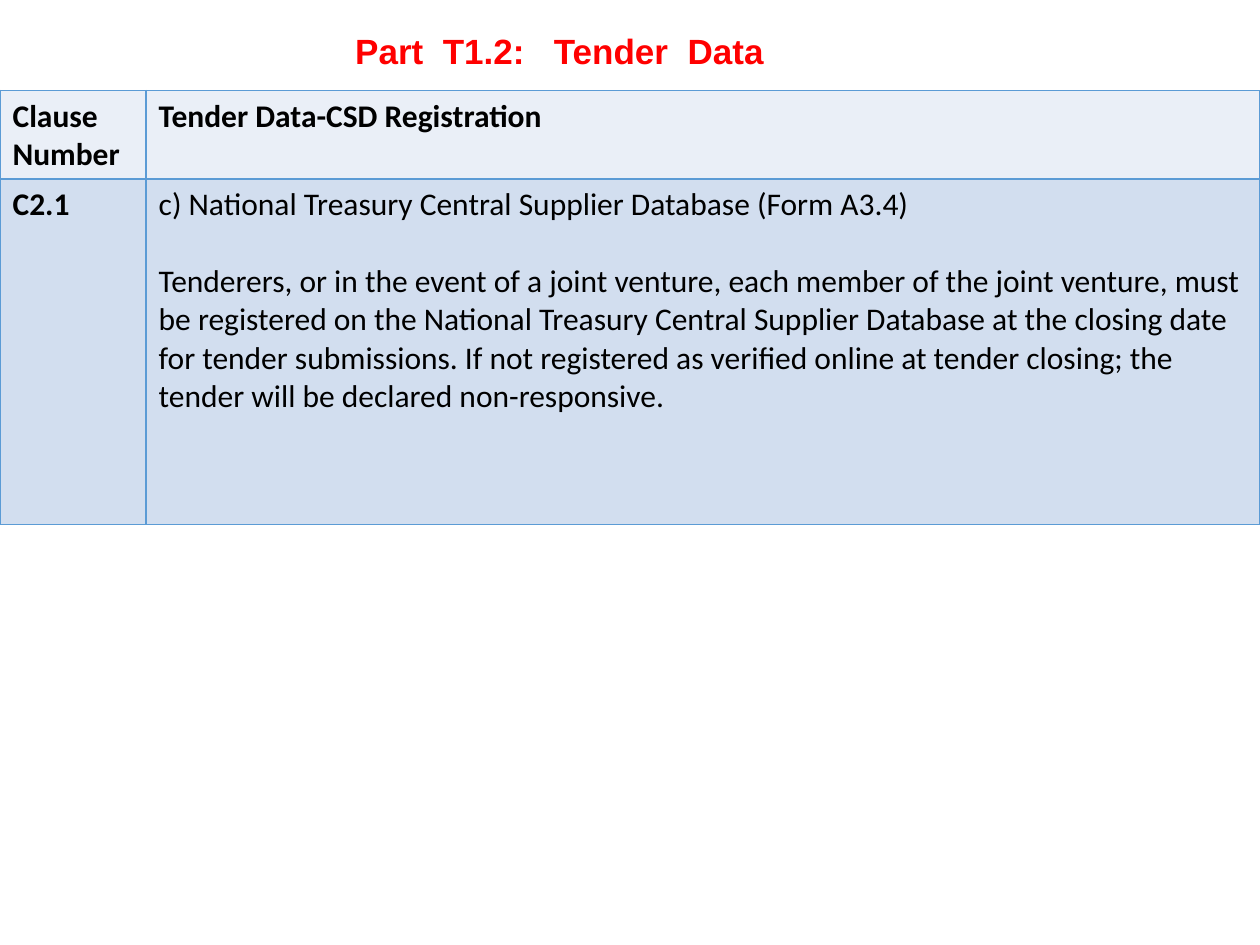
from lxml.etree import SubElement
from pptx import Presentation
from pptx.dml.color import RGBColor
from pptx.enum.text import MSO_ANCHOR, MSO_AUTO_SIZE, PP_ALIGN
from pptx.oxml.ns import qn
from pptx.util import Inches, Pt

RED = RGBColor(0xFF, 0x00, 0x00)
BLACK = RGBColor(0x00, 0x00, 0x00)
EDGE = RGBColor(0x5B, 0x9B, 0xD5)
PALE = RGBColor(0xEA, 0xEF, 0xF7)
BLUE = RGBColor(0xD2, 0xDE, 0xEF)

WIDE, HIGH = Inches(10), Inches(7.5)
HEAD = (0.271, 0.025, 0.346, 0.059)
GRID = (0, 0.096, 1, 0.459)
COLS = (0.116, 0.884)
ROWS = (0.204, 0.796)
SPACE = 556

TITLE = (("Part", 1), ("T1.2:", 2), ("Tender", 1), ("Data", 0))
CLAUSE = "c) National Treasury Central Supplier Database (Form A3.4)"
RULE = (
    "Tenderers, or in the event of a joint venture, each member of the joint "
    "venture, must be registered on the National Treasury Central Supplier "
    "Database at the closing date for tender submissions. If not registered as "
    "verified online at tender closing; the tender will be declared "
    "non-responsive."
)
TABLE = (
    (PALE, ((True, 0, ("Clause", "Number")),
            (True, 0, ("Tender Data-CSD Registration",)))),
    (BLUE, ((True, 0, ("C2.1",)),
            (False, 22, (CLAUSE, RULE)))),
)


def scale(box):
    """Turn shares of the slide into lengths."""
    return [round(part * side) for part, side in zip(box, (WIDE, HIGH) * 2)]


def add_run(para, text, face, size, color, bold):
    """Add one styled run to a paragraph."""
    run = para.add_run()
    run.text = text
    font = run.font
    font.name, font.size, font.bold = face, Pt(size), bold
    font.color.rgb = color
    return run


def add_title(slide, box):
    """Place the heading, widening its word gaps by letter spacing."""
    title = slide.shapes.title
    title.left, title.top, title.width, title.height = scale(box)
    frame = title.text_frame
    frame.word_wrap = False
    frame.auto_size = MSO_AUTO_SIZE.SHAPE_TO_FIT_TEXT
    frame.vertical_anchor = MSO_ANCHOR.TOP
    para = frame.paragraphs[0]
    para.alignment = PP_ALIGN.CENTER
    for word, extra in TITLE:
        add_run(para, word, "Arial", 20, RED, True)
        if extra:
            gap = add_run(para, " ", "Arial", 20, RED, True)
            gap._r.get_or_add_rPr().set("spc", str(extra * SPACE))


def add_edges(cell):
    """Draw a thin line on each side of a cell."""
    props = cell._tc.get_or_add_tcPr()
    for side in ("a:lnL", "a:lnR", "a:lnT", "a:lnB"):
        line = SubElement(props, qn(side), w=str(Pt(1)))
        fill = SubElement(line, qn("a:solidFill"))
        SubElement(fill, qn("a:srgbClr"), val=str(EDGE))


def fill_cell(cell, color, bold, gap, lines):
    """Give a cell its edges, fill and paragraphs."""
    add_edges(cell)
    cell.fill.solid()
    cell.fill.fore_color.rgb = color
    frame = cell.text_frame
    for i, line in enumerate(lines):
        para = frame.add_paragraph() if i else frame.paragraphs[0]
        if i and gap:
            para.space_before = Pt(gap)
        add_run(para, line, "Calibri", 18, BLACK, bold)


def add_grid(slide, box):
    """Build the clause table inside its box."""
    left, top, width, height = scale(box)
    table = slide.shapes.add_table(
        len(ROWS), len(COLS), left, top, width, height).table
    for col, share in zip(table.columns, COLS):
        col.width = round(width * share)
    for row, share, (color, cells) in zip(table.rows, ROWS, TABLE):
        row.height = round(height * share)
        for cell, (bold, gap, lines) in zip(row.cells, cells):
            fill_cell(cell, color, bold, gap, lines)


def main():
    """Make and save the slide."""
    deck = Presentation()
    deck.slide_width, deck.slide_height = WIDE, HIGH
    slide = deck.slides.add_slide(deck.slide_layouts.get_by_name("Title Only"))
    add_title(slide, HEAD)
    add_grid(slide, GRID)
    deck.save("out.pptx")


if __name__ == "__main__":
    main()
